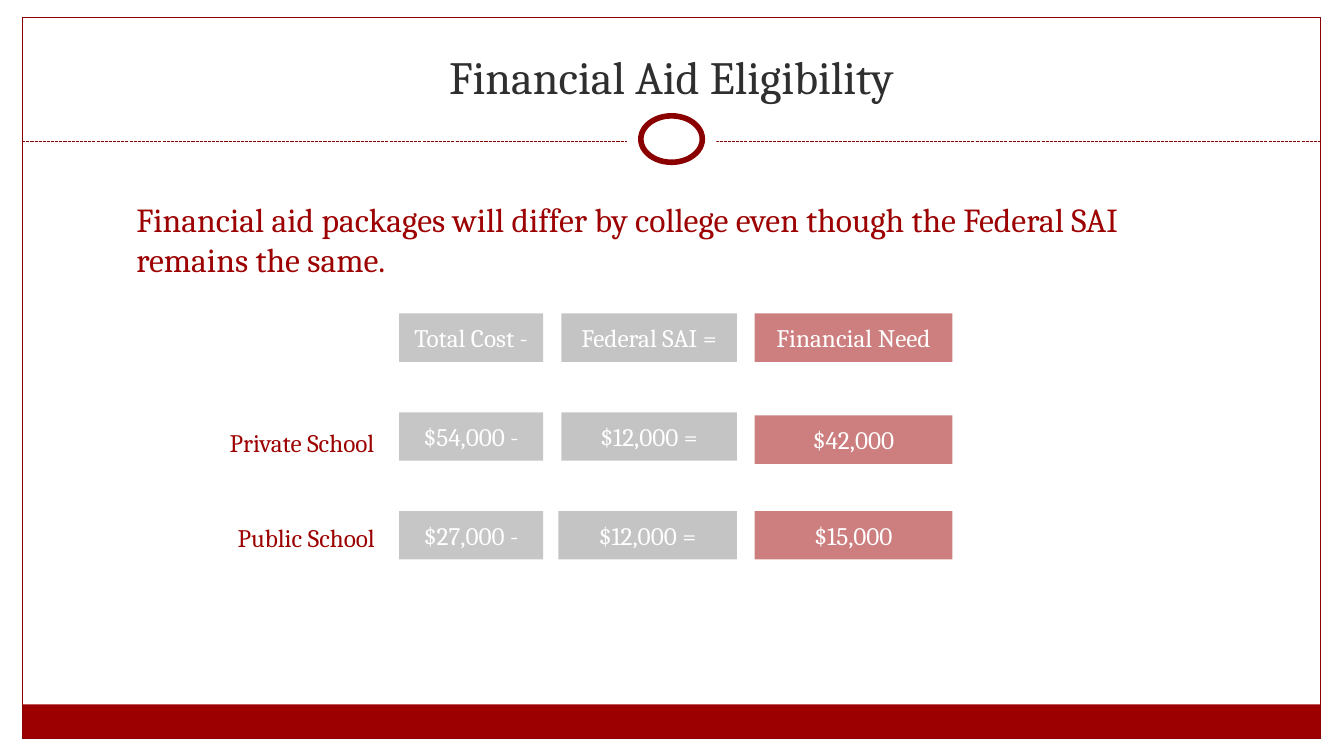
from dataclasses import dataclass

from lxml import etree
from pptx import Presentation
from pptx.dml.color import RGBColor
from pptx.enum.dml import MSO_LINE
from pptx.enum.shapes import MSO_CONNECTOR, MSO_SHAPE
from pptx.enum.text import MSO_ANCHOR, MSO_AUTO_SIZE, PP_ALIGN
from pptx.oxml.ns import qn
from pptx.util import Cm, Pt

RECT, OVAL = MSO_SHAPE.RECTANGLE, MSO_SHAPE.OVAL
LINE, DASH = MSO_CONNECTOR.STRAIGHT, MSO_LINE.SQUARE_DOT
LEFT, CENTER = PP_ALIGN.LEFT, PP_ALIGN.CENTER
TOP, MIDDLE, BOTTOM = MSO_ANCHOR.TOP, MSO_ANCHOR.MIDDLE, MSO_ANCHOR.BOTTOM
NO_FIT = MSO_AUTO_SIZE.NONE


@dataclass
class Theme:
    font: str = "Cambria"
    red: str = "9C0000"
    edge: str = "8A0000"
    ink: str = "2F2F2F"
    white: str = "FFFFFF"
    gray: str = "8F8F8F"
    slate: str = "8B8B8B"
    title: int = 33
    body: int = 24
    cell: int = 18


class Deck:
    def __init__(self, slide, theme):
        self.slide, self.theme = slide, theme

    def place(self, shape, box):
        shape.left, shape.top, shape.width, shape.height = map(Cm, box)

    def put_text(self, shape, text, size, color, align=LEFT, anchor=TOP):
        frame = shape.text_frame
        frame.word_wrap = True
        frame.auto_size = NO_FIT
        frame.vertical_anchor = anchor
        para = frame.paragraphs[0]
        para.alignment = align
        run = para.add_run()
        run.text = text
        run.font.name = self.theme.font
        run.font.size = Pt(size)
        run.font.color.rgb = RGBColor.from_string(color)

    def shape(self, kind, box, fill=None, line=None, width=0.75, alpha=None):
        shape = self.slide.shapes.add_shape(kind, *map(Cm, box))
        shape.shadow.inherit = False
        if fill:
            shape.fill.solid()
            shape.fill.fore_color.rgb = RGBColor.from_string(fill)
        else:
            shape.fill.background()
        if alpha:
            tint = shape._element.spPr.find(".//" + qn("a:srgbClr"))
            etree.SubElement(tint, qn("a:alpha"), val=str(alpha * 1000))
        if line:
            shape.line.color.rgb = RGBColor.from_string(line)
            shape.line.width = Pt(width)
        else:
            shape.line.fill.background()
        return shape

    def rule(self, left, right, y):
        rule = self.slide.shapes.add_connector(LINE, Cm(left), Cm(y), Cm(right), Cm(y))
        rule.line.color.rgb = RGBColor.from_string(self.theme.edge)
        rule.line.width = Pt(0.75)
        rule.line.dash_style = DASH
        etree.SubElement(rule._element.spPr, qn("a:effectLst"))

    def title(self, text, box):
        shape = self.slide.shapes.title
        self.place(shape, box)
        self.put_text(shape, text, self.theme.title, self.theme.ink, CENTER, BOTTOM)

    def body(self, text, box):
        shape = self.slide.placeholders[1]
        self.place(shape, box)
        para = shape.text_frame.paragraphs[0]
        props = para._p.get_or_add_pPr()
        props.set("marL", "0")
        props.set("indent", "0")
        etree.SubElement(props, qn("a:buNone"))
        para.space_before = Pt(0)
        self.put_text(shape, text, self.theme.body, self.theme.red)

    def cell(self, text, box, fill):
        shape = self.shape(RECT, box, fill, alpha=50)
        self.put_text(shape, text, self.theme.cell, self.theme.white, CENTER, MIDDLE)

    def label(self, text, box):
        shape = self.slide.shapes.add_textbox(*map(Cm, box))
        self.put_text(shape, text, self.theme.cell, self.theme.red)


def main():
    deck = Presentation()
    deck.slide_width, deck.slide_height = Cm(33.87), Cm(19.05)
    theme = Theme()
    page = Deck(deck.slides.add_slide(deck.slide_layouts[1]), theme)

    # Frame, footer bar and ring
    page.shape(RECT, (0.56, 17.75, 32.72, 0.87), theme.red)
    page.shape(RECT, (0.56, 0.43, 32.72, 18.19), line=theme.edge)
    page.rule(0.56, 33.28, 3.56)
    page.shape(OVAL, (15.8, 2.67, 2.26, 1.7), theme.white)
    page.shape(OVAL, (16.15, 2.92, 1.55, 1.17), theme.white, theme.edge, 4)

    # Title and lead sentence
    page.title("Financial Aid Eligibility", (1.12, 0.64, 31.6, 2.11))
    page.body("Financial aid packages will differ by college even though "
              "the Federal SAI remains the same.", (3.18, 4.88, 27.1, 12.07))

    # Cost grid: left edge, width and fill of each column
    cols = [(10.06, 3.63, theme.gray), (14.15, 4.42, theme.slate),
            (19.02, 4.98, theme.red)]
    rows = [("Total Cost -", "Federal SAI =", "Financial Need"),
            ("$54,000 -", "$12,000 =", "$42,000"),
            ("$27,000 -", "$12,000 =", "$15,000")]
    top, step, height = 7.9, 2.49, 1.22
    # Small offsets by row and column: left edge, top edge
    nudge = {(1, 2): (0, 0.08), (2, 1): (-0.08, 0)}
    for r, row in enumerate(rows):
        for c, (text, (left, width, fill)) in enumerate(zip(row, cols)):
            dx, dy = nudge.get((r, c), (0, 0))
            box = (left + dx, top + r * step + dy, width - dx, height)
            page.cell(text, box, fill)

    # Row labels
    page.label("Private School", (5.54, 10.64, 5.03, 1.02))
    page.label("Public School", (5.74, 13.03, 4.32, 1.02))

    deck.save("out.pptx")


if __name__ == "__main__":
    main()
